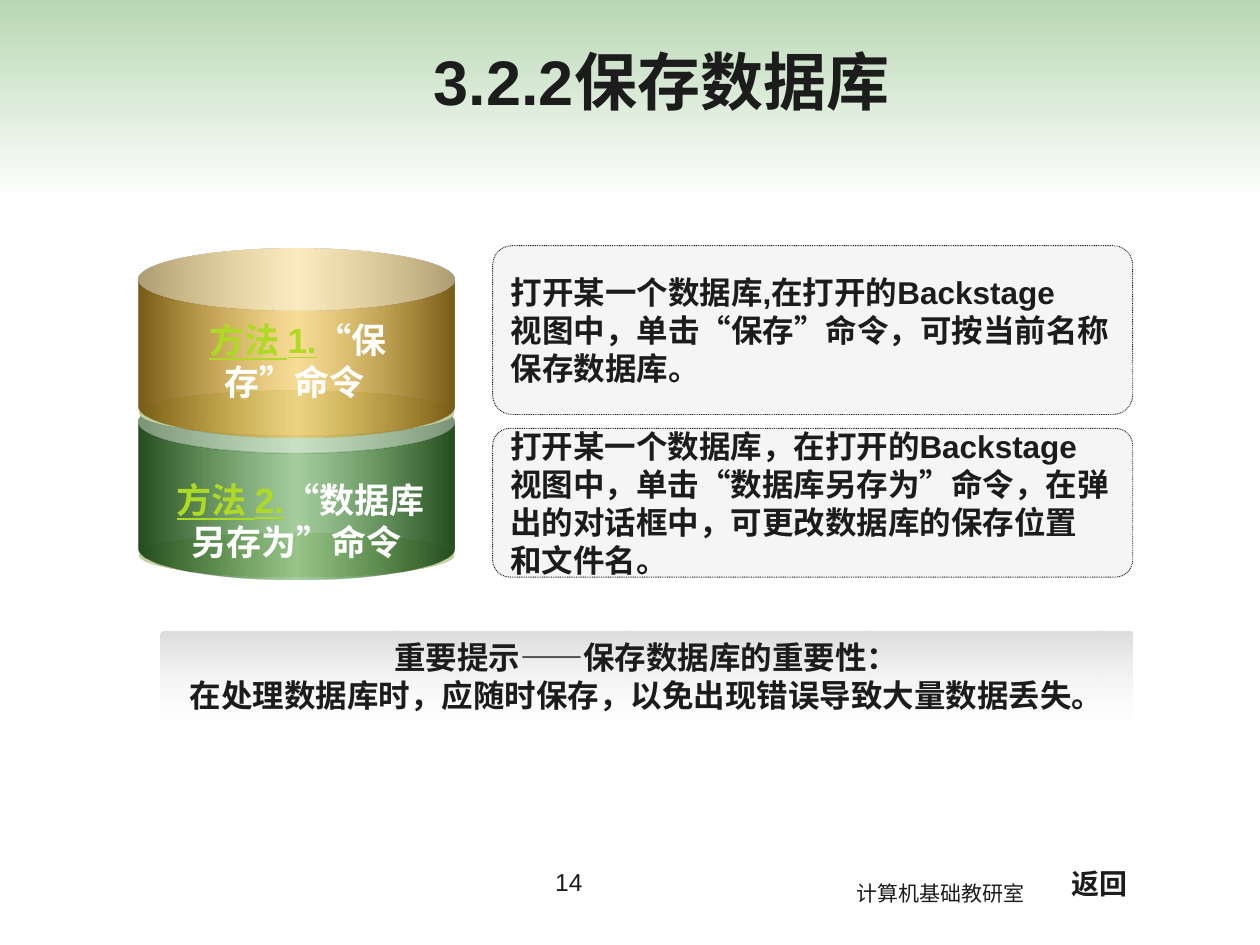
from lxml import etree
from pptx import Presentation
from pptx.dml.color import RGBColor
from pptx.enum.dml import MSO_LINE
from pptx.enum.shapes import MSO_SHAPE
from pptx.enum.text import MSO_ANCHOR, MSO_AUTO_SIZE, PP_ALIGN
from pptx.oxml import parse_xml
from pptx.oxml.ns import nsdecls, qn
from pptx.util import Inches, Pt

CENTER, LEFT = PP_ALIGN.CENTER, PP_ALIGN.LEFT
MIDDLE, TOP = MSO_ANCHOR.MIDDLE, MSO_ANCHOR.TOP
RECT, ROUNDED = MSO_SHAPE.RECTANGLE, MSO_SHAPE.ROUNDED_RECTANGLE
CAN, OVAL = MSO_SHAPE.CAN, MSO_SHAPE.OVAL
DOTTED, NO_FIT = MSO_LINE.ROUND_DOT, MSO_AUTO_SIZE.NONE
LATIN, CJK = "Arial", "Noto Sans CJK JP"

COLORS = {
    "ink": "1C1C1C", "white": "FFFFFF", "lime": "AED925", "panel": "4D4D4D",
    "green": "4E9D41", "dark green": "264D1F", "gold": "F3BD33",
    "dark gold": "785C18", "rim": "C1CF9D", "pale rim": "E5EBD5",
    "tip": "DDDDDD",
}

# Shared columns of the slide, in inches
CAN_LEFT, CAN_WIDTH, CAN_HEIGHT, RIM_HEIGHT = 1.1, 2.51, 1.5, 0.35
PANEL_LEFT, PANEL_WIDTH = 3.91, 5.08


def gradient(stops, angle):
    """Stops are (position %, colour name, opacity %)."""
    marks = "".join(f'<a:gs pos="{pos * 1000}"><a:srgbClr val="{COLORS[name]}">'
                    f'<a:alpha val="{opacity * 1000}"/></a:srgbClr></a:gs>'
                    for pos, name, opacity in stops)
    return parse_xml(f'<a:gradFill {nsdecls("a")} rotWithShape="1"><a:gsLst>{marks}'
                     f'</a:gsLst><a:lin ang="{angle * 60000}" scaled="0"/></a:gradFill>')


def add_span(para, text, size, color="ink", bold=True, underline=False, font=LATIN):
    span = para.add_run()
    span.text = text
    span.font.size, span.font.bold = Pt(size), bold
    span.font.name = font
    span.font.underline = underline
    span.font.color.rgb = RGBColor.from_string(COLORS[color])
    latin = span.font._element.find(qn("a:latin"))
    latin.addnext(etree.Element(qn("a:ea"), typeface=CJK))


def write(shape, lines, size, align=LEFT, anchor=TOP, wrap=True):
    """Fill a shape with paragraphs; a line is a list of (text, format) spans."""
    frame = shape.text_frame
    frame.word_wrap, frame.vertical_anchor = wrap, anchor
    frame.auto_size = NO_FIT
    for number, line in enumerate(lines):
        para = frame.paragraphs[0] if number == 0 else frame.add_paragraph()
        para.alignment = align
        for text, style in line:
            add_span(para, text, size, **style)


def plain(*texts, **style):
    return [[(text, style)] for text in texts]


def add_label(slide, place, lines, size, align=LEFT):
    box = slide.shapes.add_textbox(*map(Inches, place))
    write(box, lines, size, align)


def add_form(slide, kind, place, stops=None, angle=0, adjust=None):
    form = slide.shapes.add_shape(kind, *map(Inches, place))
    form.shadow.inherit = False
    form.line.fill.background()
    if adjust is not None:
        form.adjustments[0] = adjust
    if stops:
        form._element.spPr.find(qn("a:prstGeom")).addnext(gradient(stops, angle))
    return form


def add_panel(slide, top, height, texts, wrap):
    panel = add_form(slide, ROUNDED, (PANEL_LEFT, top, PANEL_WIDTH, height), adjust=0.115)
    panel.fill.solid()
    panel.fill.fore_color.rgb = RGBColor.from_string(COLORS["panel"])
    tint = panel._element.spPr.find(qn("a:solidFill"))[0]
    etree.SubElement(tint, qn("a:alpha"), val="5000")
    panel.line.color.rgb = RGBColor.from_string(COLORS["ink"])
    panel.line.width, panel.line.dash_style = Pt(0.5), DOTTED
    write(panel, plain(*texts), 18, anchor=MIDDLE, wrap=wrap)


def add_can(slide, top, rim_top, edge, core):
    """A drum with the pale rim that lies under it."""
    add_form(slide, OVAL, (CAN_LEFT, rim_top, CAN_WIDTH, RIM_HEIGHT),
             [(0, "rim", 100), (50, "pale rim", 100), (100, "rim", 100)])
    add_form(slide, CAN, (CAN_LEFT, top, CAN_WIDTH, CAN_HEIGHT),
             [(0, edge, 100), (50, core, 50), (100, edge, 100)], adjust=0.332)


def add_method(slide, left, top, name, command):
    line = [(" ", {"color": "white"}),
            (name, {"color": "lime", "underline": True}),
            (command, {"color": "white"})]
    add_label(slide, (left, top, 2.33, 0.77), [line], 20, CENTER)


def set_title(slide, text):
    title = slide.shapes.title
    title.left, title.top, title.width, title.height = map(Inches, (0.5, 0.2, 9.5, 0.88))
    write(title, plain(text), 36, CENTER, MIDDLE)


def main():
    deck = Presentation()
    deck.slide_width, deck.slide_height = Inches(10), Inches(7.5)
    slide = deck.slides.add_slide(deck.slide_layouts[5])

    # Header band, kept behind the title
    band = add_form(slide, RECT, (0, 0, 10, 1.57),
                    [(0, "green", 40), (100, "white", 40)], 90)
    slide.shapes.title._element.addprevious(band._element)
    set_title(slide, "3.2.2保存数据库")

    # Footer
    add_label(slide, (6.7, 6.94, 1.71, 0.3),
              plain("计算机基础教研室", bold=False, font=CJK), 12)
    add_label(slide, (3.35, 6.83, 2.33, 0.52), plain("14", bold=False), 14, CENTER)
    add_label(slide, (8.41, 6.83, 0.74, 0.37), plain("返回"), 16)

    # Stacked drums, the lower one first
    add_can(slide, 3.1, 4.23, "dark green", "green")
    add_can(slide, 1.97, 3.1, "dark gold", "gold")
    add_method(slide, 1.17, 2.48, "方法 1.", "“保存”命令")
    add_method(slide, 1.19, 3.75, "方法 2.", "“数据库另存为”命令")

    # Explanations beside the drums
    add_panel(slide, 1.95, 1.34,
              ["打开某一个数据库,在打开的Backstage",
               "视图中，单击“保存”命令，可按当前名称保存数据库。"], True)
    add_panel(slide, 3.4, 1.18,
              ["打开某一个数据库，在打开的Backstage",
               "视图中，单击“数据库另存为”命令，在弹",
               "出的对话框中，可更改数据库的保存位置",
               "和文件名。"], False)

    # Important tip
    tip = add_form(slide, ROUNDED, (1.27, 5.01, 7.72, 0.84),
                   [(0, "tip", 100), (100, "white", 0)], 90, 0.023)
    write(tip, plain("重要提示——保存数据库的重要性：",
                     "在处理数据库时，应随时保存，以免出现错误导致大量数据丢失。"), 18, CENTER)

    deck.save("out.pptx")


if __name__ == "__main__":
    main()
